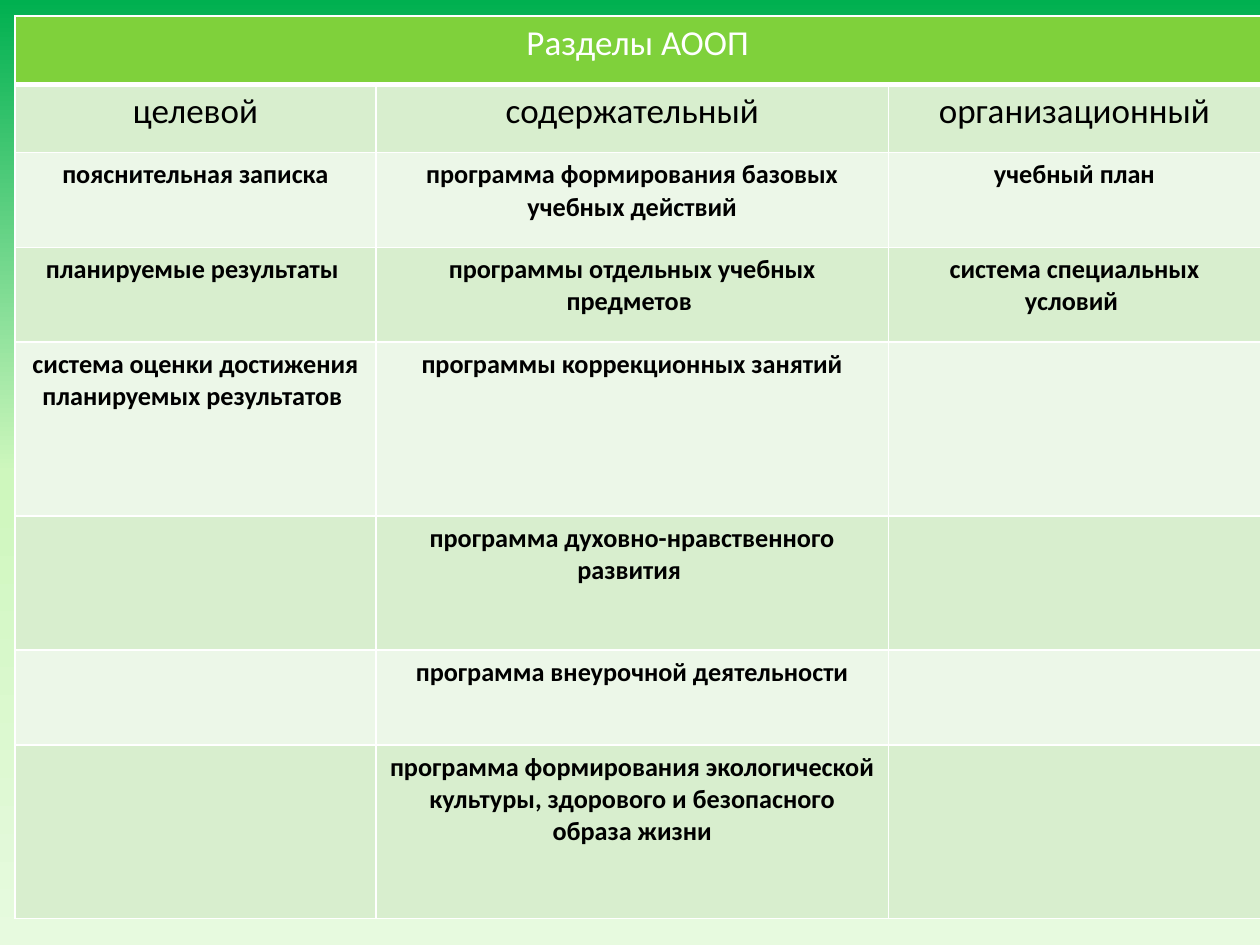
from copy import deepcopy

from lxml import etree
from pptx import Presentation
from pptx import util as u
from pptx.dml.color import RGBColor
from pptx.enum import text
from pptx.oxml.ns import qn

COLORS = {
    "top": "00B050", "middle": "CEF7BD", "bottom": "E7FADF",
    "header": "7FD13B", "band_dark": "D8EECE", "band_light": "ECF7E8",
    "white": "FFFFFF", "black": "000000",
}


def write(cell, content, size=15, bold=False, color="black"):
    p = cell.text_frame.paragraphs[0]
    p.alignment = text.PP_ALIGN.CENTER
    r = p.add_run()
    r.text = content
    r.font.name = "Calibri"
    r.font.size = u.Pt(size)
    r.font.bold = bold
    r.font.color.rgb = RGBColor.from_string(COLORS[color])


def add_borders(cell, **widths):
    tcPr = cell._tc.get_or_add_tcPr()
    for side in "LRTB":
        ln = etree.SubElement(tcPr, qn(f"a:ln{side}"), w=str(u.Pt(widths.get(side, 1))))
        fill = etree.SubElement(ln, qn("a:solidFill"))
        etree.SubElement(fill, qn("a:srgbClr"), val=COLORS["white"])


prs = Presentation()
prs.slide_width, prs.slide_height = u.Cm(25.4), u.Cm(19.05)
s = prs.slides.add_slide(prs.slide_layouts[6])

# Background: three-stop vertical gradient
bg = s.background.fill
bg.gradient()
bg.gradient_angle = 270
stops = s.element.find(".//" + qn("a:gsLst"))
stops.append(deepcopy(stops[-1]))
for stop, gs, pos, name in zip(bg.gradient_stops, stops, (0, 50, 100),
                               ("top", "middle", "bottom")):
    stop.color.rgb = RGBColor.from_string(COLORS[name])
    gs.set("pos", str(pos * 1000))

# Table content: heading, column names, then the sections
rows = [
    ["Разделы АООП", "", ""],
    ["целевой", "содержательный", "организационный"],
    ["пояснительная записка", "программа формирования базовых учебных действий",
     "учебный план"],
    ["планируемые результаты ", "программы отдельных учебных предметов ",
     "система специальных условий "],
    ["система оценки достижения планируемых результатов ",
     "программы коррекционных занятий", ""],
    ["", "программа духовно-нравственного развития ", ""],
    ["", "программа внеурочной деятельности", ""],
    ["", "программа формирования экологической культуры, "
         "здорового и безопасного образа жизни", ""],
]
col_widths = [7.28, 10.33, 7.5]
row_heights = [1.38, 1.38, 1.91, 1.91, 3.5, 2.71, 1.91, 3.5]

table = s.shapes.add_table(len(rows), len(col_widths), u.Cm(0.3), u.Cm(0.32),
                           u.Cm(sum(col_widths)), u.Cm(sum(row_heights))).table
for column, width in zip(table.columns, col_widths):
    column.width = u.Cm(width)
for row, height in zip(table.rows, row_heights):
    row.height = u.Cm(height)
table.cell(0, 0).merge(table.cell(0, 2))

# Cells: borders, banded fills and text
for i, row in enumerate(rows):
    if i == 0:
        fill, borders, style = "header", {"B": 3}, {"size": 20, "color": "white"}
    elif i == 1:
        fill, borders, style = "band_dark", {"T": 3}, {"size": 20}
    else:
        fill = "band_dark" if i % 2 else "band_light"
        borders, style = {}, {"bold": True}
    for j, content in enumerate(row):
        cell = table.cell(i, j)
        add_borders(cell, **borders)
        cell.fill.solid()
        cell.fill.fore_color.rgb = RGBColor.from_string(COLORS[fill])
        if content:
            write(cell, content, **style)

prs.save("out.pptx")
